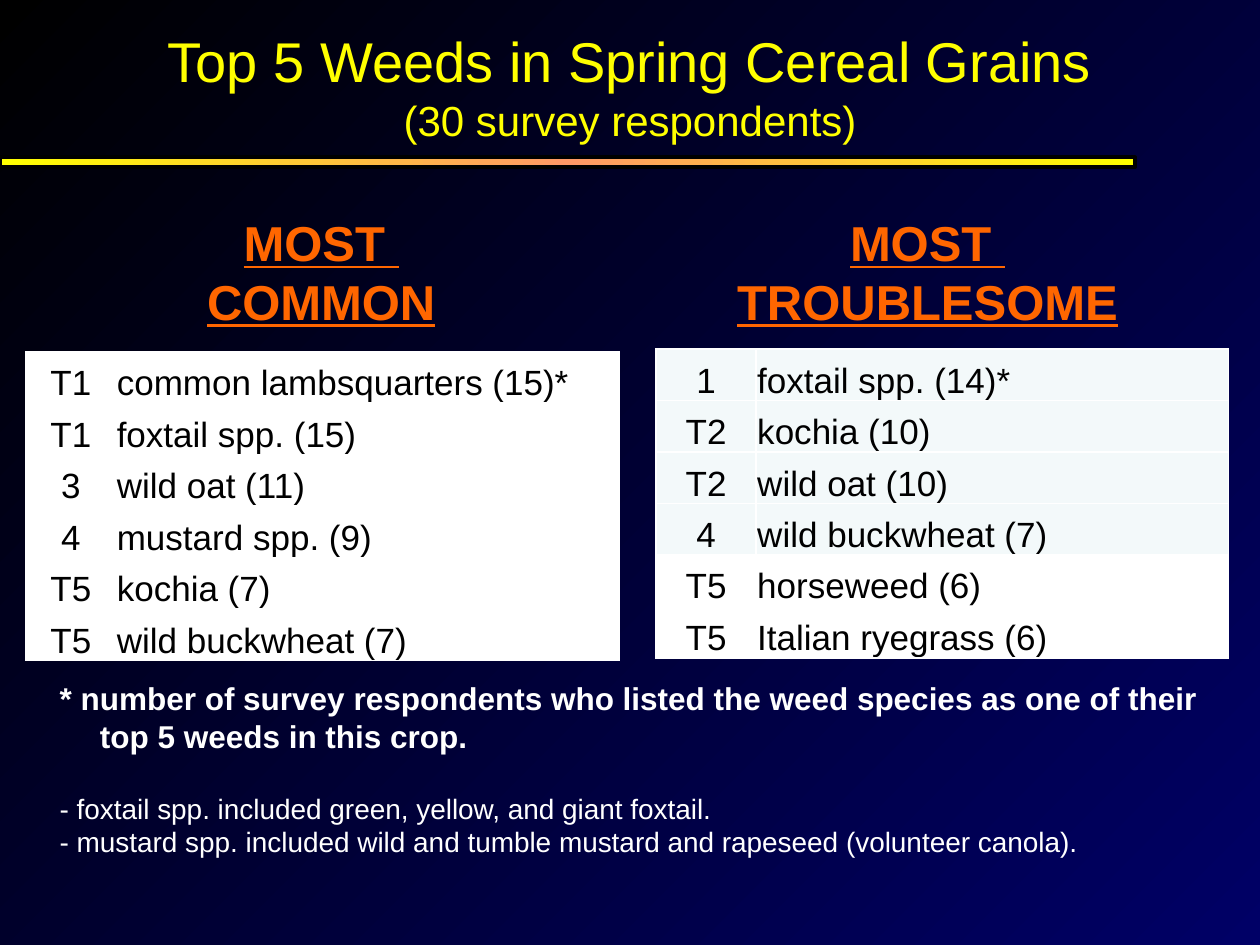
import copy

import pptx
import pptx.dml.color
import pptx.enum.shapes
import pptx.enum.text
import pptx.oxml
import pptx.oxml.ns
import pptx.util

Pt = pptx.util.Pt
RGBColor = pptx.dml.color.RGBColor
ALIGN = pptx.enum.text.PP_ALIGN
ANCHOR = pptx.enum.text.MSO_ANCHOR

BLACK = RGBColor(0x00, 0x00, 0x00)
NAVY = RGBColor(0x00, 0x00, 0x66)
YELLOW = RGBColor(0xFF, 0xFF, 0x00)
PEACH = RGBColor(0xFF, 0x99, 0x66)
ORANGE = RGBColor(0xFF, 0x66, 0x00)
WHITE = RGBColor(0xFF, 0xFF, 0xFF)
PALE = RGBColor(0xF3, 0xF9, 0xFA)


def write_para(para, text, color, font, layout):
    """Fill a paragraph with one span and apply font and paragraph values."""
    span = para.add_run()
    span.text = text
    span.font.name = "Arial"
    span.font.color.rgb = color
    for name, value in font.items():
        setattr(span.font, name, value)
    for name, value in layout.items():
        setattr(para, name, value)


def add_text(page, bounds, lines, color, anchor=ANCHOR.TOP, wrap=True):
    """Add a text box with one paragraph per (text, font, layout) line."""
    box = page.shapes.add_textbox(*map(Pt, bounds))
    frame = box.text_frame
    frame.word_wrap = wrap
    frame.vertical_anchor = anchor
    for index, (text, font, layout) in enumerate(lines):
        para = frame.add_paragraph() if index else frame.paragraphs[0]
        write_para(para, text, color, font, layout)
        if "hanging" in font:
            raise ValueError(text)
    return box


deck = pptx.Presentation()
deck.slide_width, deck.slide_height = Pt(720), Pt(540)
page = deck.slides.add_slide(deck.slide_layouts[6])
centered = {"alignment": ALIGN.CENTER}

# Background: black at top left to navy at bottom right
background = page.background.fill
background.gradient()
background.gradient_angle = 315
for stop, color in zip(background.gradient_stops, (BLACK, NAVY)):
    stop.color.rgb = color

# Title
add_text(page, (24, 6, 672, 86), [
    ("Top 5 Weeds in Spring Cereal Grains", {"size": Pt(32)}, centered),
    ("(30 survey respondents)", {"size": Pt(24)}, centered),
], YELLOW, ANCHOR.MIDDLE)

# Rule under the title, with a third gradient stop in the middle
rule = page.shapes.add_shape(pptx.enum.shapes.MSO_SHAPE.RECTANGLE,
                             Pt(0), Pt(90), Pt(648.5), Pt(5.5))
rule.shadow.inherit = False
rule.line.color.rgb = BLACK
rule.line.width = Pt(2.25)
rule.fill.gradient()
rule.fill.gradient_angle = 0
stop_list = rule._element.spPr.find(".//" + pptx.oxml.ns.qn("a:gsLst"))
stop_list.insert(1, copy.deepcopy(stop_list[0]))
for stop, position, color in zip(rule.fill.gradient_stops, (0, 0.5, 1),
                                 (YELLOW, PEACH, YELLOW)):
    stop.position = position
    stop.color.rgb = color

# Column headings
heading_font = {"size": Pt(28), "bold": True, "underline": True}
for left, width, word in ((97, 173, "COMMON"), (412.5, 235, "TROUBLESOME")):
    add_text(page, (left, 118, width, 75),
             [(text, heading_font, centered) for text in ("MOST ", word)],
             ORANGE, wrap=False)

# Ranking tables: left, top, column widths, number of tinted rows, entries
rankings = [
    (15, 201, (51, 288), 0, [
        ("T1", "common lambsquarters (15)*"),
        ("T1", "foxtail spp. (15)"),
        ("3", "wild oat (11)"),
        ("4", "mustard spp. (9)"),
        ("T5", "kochia (7)"),
        ("T5", "wild buckwheat (7)"),
    ]),
    (375, 199.5, (57, 270), 4, [
        ("1", "foxtail spp. (14)*"),
        ("T2", "kochia (10)"),
        ("T2", "wild oat (10)"),
        ("4", "wild buckwheat (7)"),
        ("T5", "horseweed (6)"),
        ("T5", "Italian ryegrass (6)"),
    ]),
]
cell_format = {"vertical_anchor": ANCHOR.BOTTOM, "margin_left": Pt(0.75),
               "margin_right": Pt(0.75), "margin_top": Pt(0.75),
               "margin_bottom": Pt(0)}
row_height = 29.4
for left, top, widths, tinted_rows, entries in rankings:
    table = page.shapes.add_table(
        len(entries), len(widths), Pt(left), Pt(top),
        Pt(sum(widths)), Pt(row_height * len(entries))).table
    table.first_row = table.horz_banding = False
    for column, width in zip(table.columns, widths):
        column.width = Pt(width)
    for row_index, entry in enumerate(entries):
        table.rows[row_index].height = Pt(row_height)
        for column_index, text in enumerate(entry):
            cell = table.cell(row_index, column_index)
            for name, value in cell_format.items():
                setattr(cell, name, value)
            write_para(cell.text_frame.paragraphs[0], text, BLACK,
                       {"size": Pt(20)}, {} if column_index else centered)
            # Borders come before the fill in the cell properties
            properties = cell._tc.get_or_add_tcPr()
            for side in ("lnL", "lnR", "lnT", "lnB"):
                properties.append(pptx.oxml.parse_xml(
                    f'<a:{side} {pptx.oxml.ns.nsdecls("a")} w="{Pt(1)}"><a:solidFill>'
                    f'<a:srgbClr val="{WHITE}"/></a:solidFill></a:{side}>'))
            cell.fill.solid()
            cell.fill.fore_color.rgb = PALE if row_index < tinted_rows else WHITE

# Footnotes
note_font = {"size": Pt(16), "bold": False}
notes = add_text(page, (27, 384.5, 666, 112), [
    ("* number of survey respondents who listed the weed species as one of "
     "their top 5 weeds in this crop.", {"size": Pt(18), "bold": True}, {}),
    ("- foxtail spp. included green, yellow, and giant foxtail.",
     note_font, {"space_before": Pt(21)}),
    ("- mustard spp. included wild and tumble mustard and rapeseed "
     "(volunteer canola).", note_font, {}),
], WHITE)
for para, hanging in zip(notes.text_frame.paragraphs, (23, 9, 9)):
    properties = para._p.get_or_add_pPr()
    properties.set("marL", str(Pt(hanging)))
    properties.set("indent", str(-Pt(hanging)))

deck.save("out.pptx")
